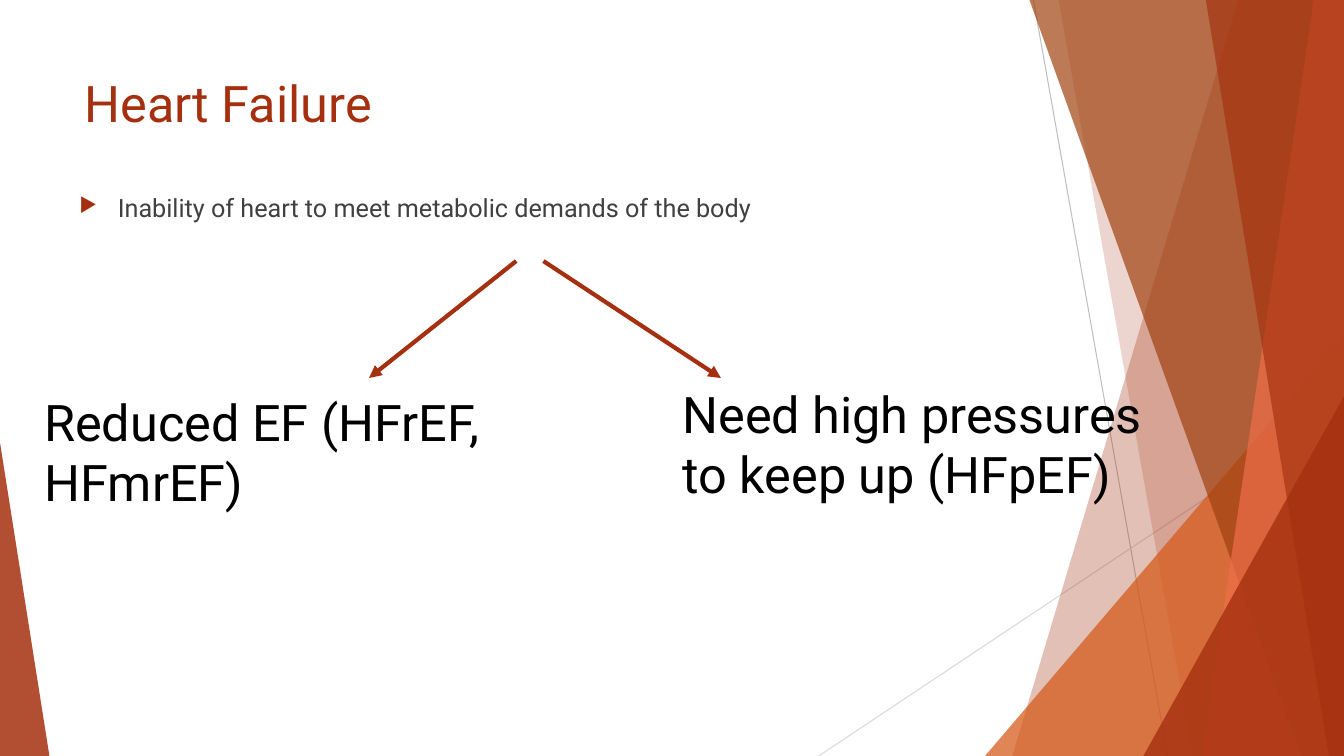
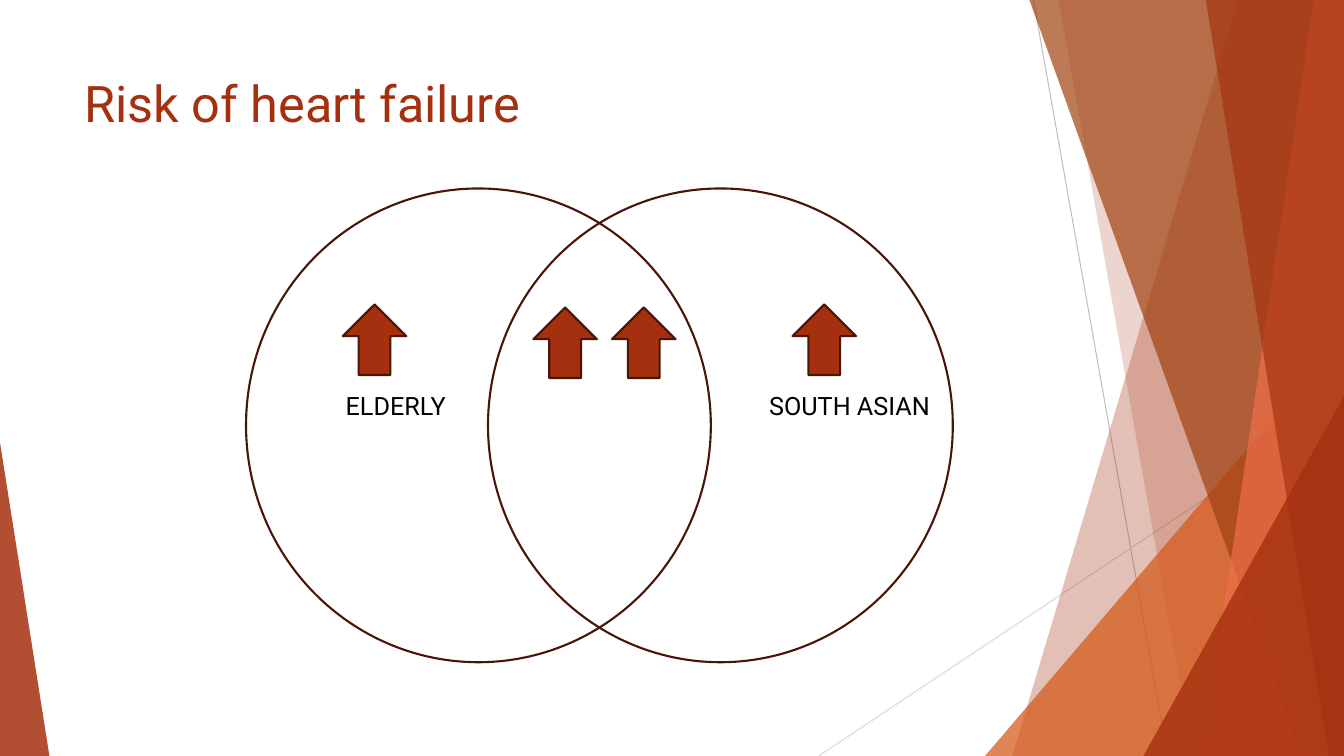
from dataclasses import dataclass

from lxml.etree import SubElement
from pptx import Presentation
from pptx.dml.color import RGBColor
from pptx.enum.shapes import MSO_CONNECTOR, MSO_SHAPE
from pptx.enum.text import MSO_ANCHOR, PP_ALIGN
from pptx.oxml.ns import qn
from pptx.util import Inches, Pt


@dataclass(frozen=True)
class Theme:
    font: str = "Roboto"
    rust: str = "A5300F"
    orange: str = "D55816"
    brown: str = "A04210"
    coral: str = "EE6E4A"
    outline: str = "481507"
    body: str = "404040"
    black: str = "000000"
    white: str = "FFFFFF"
    grey: str = "BFBFBF"
    pale_grey: str = "D9D9D9"
    heading_size: int = 36
    text_size: int = 18
    hairline: float = 0.75
    border: float = 1.5
    arrow: float = 3


theme = Theme()
WIDTH, HEIGHT = 13.33, 7.5


def paint(item, fill=None, opacity=100, line=None, weight=theme.border):
    """Fill and outline a shape or connector, without a shadow."""
    properties = item.element.spPr
    if fill:
        item.fill.solid()
        item.fill.fore_color.rgb = RGBColor.from_string(fill)
        color = properties.find(qn("a:solidFill"))[0]
        SubElement(color, qn("a:alpha"), val=str(opacity * 1000))
    elif hasattr(item, "fill"):
        item.fill.background()
    if line:
        item.line.color.rgb = RGBColor.from_string(line)
        item.line.width = Pt(weight)
    else:
        item.line.fill.background()
    SubElement(properties, qn("a:effectLst"))


def add_text(slide, text, box, size, color):
    """Add a wrapped, top-left text box and return its paragraph."""
    frame = slide.shapes.add_textbox(*map(Inches, box)).text_frame
    frame_format = {"word_wrap": True, "vertical_anchor": MSO_ANCHOR.TOP}
    for name, value in frame_format.items():
        setattr(frame, name, value)
    paragraph = frame.paragraphs[0]
    paragraph.alignment = PP_ALIGN.LEFT
    run = paragraph.add_run()
    run.text = text
    for name, value in {"name": theme.font, "size": Pt(size)}.items():
        setattr(run.font, name, value)
    run.font.color.rgb = RGBColor.from_string(color)
    return paragraph


presentation = Presentation()
presentation.slide_width = Inches(WIDTH)
presentation.slide_height = Inches(HEIGHT)

# Shared decoration, from back to front
hairlines = [
    ((10.25, 0, 11.58, HEIGHT), theme.grey),
    ((WIDTH, 4.03, 8.12, HEIGHT), theme.pale_grey),
]
# Bands reach the right edge: (left at top, left at bottom)
# Triangles stand on the bottom edge: (left, top, width, apex)
facets = [
    ((12.28, 10.04), theme.rust, 30),
    ((10.5, 11.83), theme.rust, 20),
    ((9.77, 3.33, 3.56, 1), theme.orange, 72),
    ((10.21, 12.91), theme.brown, 70),
    ((13.03, 11.92), theme.coral, 70),
    ((11.96, 13.18), theme.rust, 65),
    ((11.34, 3.93, 1.99, 1), theme.rust, 80),
    ((0, 4.39, 0.49, 0), theme.rust, 85),
]

slides = []
for title in ("Heart Failure", "Risk of heart failure"):
    slide = presentation.slides.add_slide(presentation.slide_layouts[6])
    slides.append(slide)
    for ends, color in hairlines:
        hairline = slide.shapes.add_connector(
            MSO_CONNECTOR.STRAIGHT, *map(Inches, ends))
        paint(hairline, line=color, weight=theme.hairline)
    for geometry, color, opacity in facets:
        if len(geometry) == 2:
            top_left, bottom_left = map(Inches, geometry)
            right, bottom = Inches(WIDTH), Inches(HEIGHT)
            builder = slide.shapes.build_freeform(top_left, 0)
            builder.add_line_segments(
                [(right, 0), (right, bottom), (bottom_left, bottom)])
            facet = builder.convert_to_shape()
        else:
            left, top, width, apex = geometry
            facet = slide.shapes.add_shape(
                MSO_SHAPE.ISOSCELES_TRIANGLE,
                *map(Inches, (left, top, width, HEIGHT - top)))
            facet.adjustments[0] = apex
        paint(facet, color, opacity)
    add_text(slide, title, (0.74, 0.67, 9.4, 0.89),
             theme.heading_size, theme.rust)

failure, risk = slides

# Heart failure: definition with a bullet
definition = add_text(
    failure, "Inability of heart to meet metabolic demands of the body",
    (0.69, 1.86, 9.4, 0.67), theme.text_size, theme.body)
bullet = definition._p.get_or_add_pPr()
for name, value in {"marL": Inches(0.38), "indent": Inches(-0.38)}.items():
    bullet.set(name, str(value))
bullet_color = SubElement(bullet, qn("a:buClr"))
SubElement(bullet_color, qn("a:srgbClr"), val=theme.rust)
SubElement(bullet, qn("a:buSzPct"), val="80000")
SubElement(bullet, qn("a:buChar"), char="▶")

# Heart failure: two branches
branches = [
    ((5.12, 3.66), (0.34, 3.83), "Reduced EF (HFrEF, HFmrEF)"),
    ((5.39, 7.15), (6.67, 3.75), "Need high pressures to keep up (HFpEF)"),
]
for (start, end), corner, label in branches:
    branch = failure.shapes.add_connector(
        MSO_CONNECTOR.STRAIGHT, *map(Inches, (start, 2.59, end, 3.75)))
    paint(branch, line=theme.rust, weight=theme.arrow)
    SubElement(branch.element.spPr.find(qn("a:ln")), qn("a:tailEnd"),
               type="triangle")
    add_text(failure, label, (*corner, 5.24, 1.62),
             theme.heading_size, theme.black)

# Risk: overlapping groups
for left, fill in ((2.44, theme.white), (4.84, None)):
    circle = risk.shapes.add_shape(
        MSO_SHAPE.OVAL, *map(Inches, (left, 1.87, 4.61, 4.7)))
    paint(circle, fill, line=theme.outline)
for left, group in ((3.33, "ELDERLY"), (7.53, "SOUTH ASIAN")):
    add_text(risk, group, (left, 3.82, 1.92, 0.4),
             theme.text_size, theme.black)

# Risk: one arrow per group, two in the overlap
for left, top in ((3.4, 3.02), (7.86, 3.02), (5.29, 3.05), (6.07, 3.05)):
    increase = risk.shapes.add_shape(
        MSO_SHAPE.DOWN_ARROW, *map(Inches, (left, top, 0.63, 0.7)))
    increase.rotation = 180
    paint(increase, theme.rust, line=theme.outline)

presentation.save("out.pptx")
